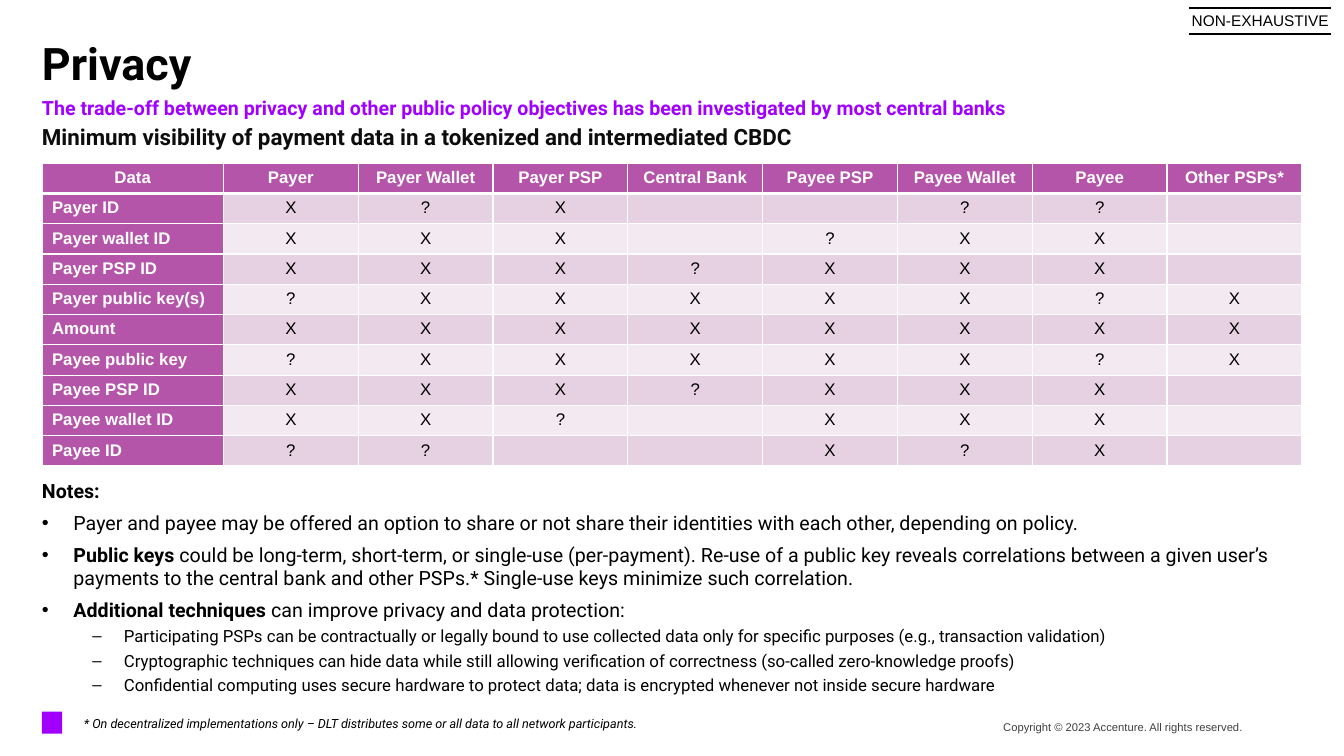
from dataclasses import dataclass

from lxml.etree import SubElement
from pptx import Presentation
from pptx.dml.color import RGBColor
from pptx.enum.shapes import MSO_CONNECTOR, MSO_SHAPE
from pptx.enum.text import MSO_ANCHOR, PP_ALIGN
from pptx.oxml.ns import qn
from pptx.slide import Slide
from pptx.table import _Cell
from pptx.text.text import TextFrame, _Paragraph
from pptx.util import Pt


@dataclass(frozen=True)
class Theme:
    heading_font: str = "Roboto"
    table_font: str = "Arial"
    black: str = "000000"
    soft_black: str = "0D0D0D"
    grey: str = "404040"
    white: str = "FFFFFF"
    violet: str = "A100FF"
    plum: str = "B455AA"
    bands: tuple[str, str] = ("E5D1E2", "F2E9F1")
    title: float = 32
    heading: float = 16
    body: float = 14
    detail: float = 12
    tag: float = 11
    footnote: float = 9
    copyright: float = 8


THEME = Theme()


@dataclass(frozen=True)
class Style:
    size: float
    color: str = THEME.black
    font: str = THEME.heading_font
    bold: bool = False
    italic: bool = False


@dataclass(frozen=True)
class Box:
    left: float
    top: float
    width: float
    height: float


@dataclass(frozen=True)
class Note:
    text: str
    lead: str = ""
    bullet: str = "•"
    margin: float = 22.5
    size: float = THEME.body
    after: float = 6


def detail(text: str) -> Note:
    return Note(text, bullet="–", margin=58.5, size=THEME.detail, after=3)


MARGIN, CONTENT_WIDTH = 30, 900
HANGING = 22.5
ROW_HEIGHT, DATA_WIDTH = 21.6, 129.6

PARTIES = ["Payer", "Payer Wallet", "Payer PSP", "Central Bank", "Payee PSP",
           "Payee Wallet", "Payee", "Other PSPs*"]
# One mark per party; a dot stands for an empty cell
VISIBILITY = {
    "Payer ID": "X?X..??.",
    "Payer wallet ID": "XXX.?XX.",
    "Payer PSP ID": "XXX?XXX.",
    "Payer public key(s)": "?XXXXX?X",
    "Amount": "XXXXXXXX",
    "Payee public key": "?XXXXX?X",
    "Payee PSP ID": "XXX?XXX.",
    "Payee wallet ID": "XX?.XXX.",
    "Payee ID": "??..X?X.",
}
NOTES = [
    Note("Payer and payee may be offered an option to share or not share their "
         "identities with each other, depending on policy."),
    Note("could be long-term, short-term, or single-use (per-payment). Re-use of a "
         "public key reveals correlations between a given user’s payments to the "
         "central bank and other PSPs.* Single-use keys minimize such correlation.",
         lead="Public keys "),
    Note("can improve privacy and data protection:", lead="Additional techniques ", after=3),
    detail("Participating PSPs can be contractually or legally bound to use collected "
           "data only for specific purposes (e.g., transaction validation)"),
    detail("Cryptographic techniques can hide data while still allowing verification "
           "of correctness (so-called zero-knowledge proofs)"),
    detail("Confidential computing uses secure hardware to protect data; data is "
           "encrypted whenever not inside secure hardware"),
]


def add_run(paragraph: _Paragraph, text: str, style: Style) -> None:
    run = paragraph.add_run()
    run.text = text
    run.font.name, run.font.size = style.font, Pt(style.size)
    run.font.bold, run.font.italic = style.bold, style.italic
    run.font.color.rgb = RGBColor.from_string(style.color)


def add_frame(slide: Slide, box: Box, anchor: MSO_ANCHOR = MSO_ANCHOR.TOP,
              wrap: bool = True) -> TextFrame:
    frame = slide.shapes.add_textbox(
        Pt(box.left), Pt(box.top), Pt(box.width), Pt(box.height)).text_frame
    frame.margin_left = frame.margin_right = frame.margin_top = frame.margin_bottom = 0
    frame.word_wrap, frame.vertical_anchor = wrap, anchor
    return frame


def add_label(slide: Slide, box: Box, text: str, style: Style,
              align: PP_ALIGN = PP_ALIGN.LEFT, anchor: MSO_ANCHOR = MSO_ANCHOR.TOP,
              wrap: bool = True) -> None:
    paragraph = add_frame(slide, box, anchor, wrap).paragraphs[0]
    paragraph.alignment = align
    add_run(paragraph, text, style)


def add_rule(slide: Slide, left: float, right: float, y: float) -> None:
    rule = slide.shapes.add_connector(
        MSO_CONNECTOR.STRAIGHT, Pt(left), Pt(y), Pt(right), Pt(y))
    rule.line.color.rgb = RGBColor.from_string(THEME.black)
    rule.line.width = Pt(1)
    SubElement(rule._element.spPr, qn("a:effectLst"))


def fill_cell(cell: _Cell, text: str, fill: str, style: Style,
              align: PP_ALIGN, bottom: float = 1) -> None:
    borders = cell._tc.get_or_add_tcPr()
    for side, width in (("L", 1), ("R", 1), ("T", 1), ("B", bottom)):
        line = SubElement(borders, qn(f"a:ln{side}"), w=str(Pt(width)))
        SubElement(SubElement(line, qn("a:solidFill")), qn("a:srgbClr"), val=THEME.white)
    cell.fill.solid()
    cell.fill.fore_color.rgb = RGBColor.from_string(fill)
    paragraph = cell.text_frame.paragraphs[0]
    paragraph.alignment = align
    if text:
        add_run(paragraph, text, style)
    else:  # keeps an empty cell from stretching its row
        SubElement(paragraph._p, qn("a:endParaRPr"), sz=str(int(style.size * 100)))


def add_visibility_table(slide: Slide) -> None:
    table = slide.shapes.add_table(
        len(VISIBILITY) + 1, len(PARTIES) + 1, Pt(MARGIN), Pt(116.6),
        Pt(CONTENT_WIDTH), Pt(ROW_HEIGHT * (len(VISIBILITY) + 1))).table
    for row in table.rows:
        row.height = Pt(ROW_HEIGHT)
    for index, column in enumerate(table.columns):
        column.width = Pt((CONTENT_WIDTH - DATA_WIDTH) / len(PARTIES) if index else DATA_WIDTH)
    header = Style(THEME.detail, THEME.white, THEME.table_font, bold=True)
    mark_style = Style(THEME.detail, font=THEME.table_font)
    for column, name in enumerate(["Data", *PARTIES]):
        fill_cell(table.cell(0, column), name, THEME.plum, header, PP_ALIGN.CENTER, bottom=3)
    for row, (item, marks) in enumerate(VISIBILITY.items(), start=1):
        fill_cell(table.cell(row, 0), item, THEME.plum, header, PP_ALIGN.LEFT)
        for column, mark in enumerate(marks, start=1):
            fill_cell(table.cell(row, column), mark.strip("."), THEME.bands[(row - 1) % 2],
                      mark_style, PP_ALIGN.CENTER)


def add_notes(slide: Slide) -> None:
    frame = add_frame(slide, Box(MARGIN, 342, CONTENT_WIDTH, 155.5))
    frame.paragraphs[0].space_after = Pt(6)
    add_run(frame.paragraphs[0], "Notes:", Style(THEME.body, bold=True))
    for note in NOTES:
        paragraph = frame.add_paragraph()
        properties = paragraph._p.get_or_add_pPr()
        properties.set("marL", str(Pt(note.margin)))
        properties.set("indent", str(-Pt(HANGING)))
        SubElement(properties, qn("a:buFont"), typeface="Arial")
        SubElement(properties, qn("a:buChar"), char=note.bullet)
        paragraph.space_after = Pt(note.after)
        if note.lead:
            add_run(paragraph, note.lead, Style(note.size, bold=True))
        add_run(paragraph, note.text, Style(note.size))


def main() -> None:
    deck = Presentation()
    deck.slide_width, deck.slide_height = Pt(960), Pt(540)
    slide = deck.slides.add_slide(deck.slide_layouts[6])

    # Title and subtitle
    heading = add_frame(slide, Box(MARGIN, 33, CONTENT_WIDTH, 49))
    title, subtitle = heading.paragraphs[0], heading.add_paragraph()
    title.line_spacing = subtitle.line_spacing = 0.8
    title.space_after = Pt(8)
    add_run(title, "Privacy", Style(THEME.title, bold=True))
    add_run(subtitle, "The trade-off between privacy and other public policy objectives "
            "has been investigated by most central banks",
            Style(THEME.body, THEME.violet, bold=True))

    # Tag in the top corner
    add_label(slide, Box(849.5, 7.9, 101.5, 13.7), "NON-EXHAUSTIVE",
              Style(THEME.tag, font=THEME.table_font), PP_ALIGN.CENTER, MSO_ANCHOR.MIDDLE)
    for y in (5.8, 24.3):
        add_rule(slide, 849.6, 950.4, y)

    # Table with its heading
    add_label(slide, Box(MARGIN, 88, 595, 19.5),
              "Minimum visibility of payment data in a tokenized and intermediated CBDC",
              Style(THEME.heading, THEME.soft_black, bold=True), wrap=False)
    add_visibility_table(slide)

    add_notes(slide)

    # Footer
    marker = slide.shapes.add_shape(MSO_SHAPE.RECTANGLE, Pt(MARGIN), Pt(508.3), Pt(14.5), Pt(15.8))
    marker.shadow.inherit = False
    marker.fill.solid()
    marker.fill.fore_color.rgb = RGBColor.from_string(THEME.violet)
    marker.line.fill.background()
    add_label(slide, Box(60, 504.7, 449, 23.8), "* On decentralized implementations only – "
              "DLT distributes some or all data to all network participants.",
              Style(THEME.footnote, italic=True), anchor=MSO_ANCHOR.MIDDLE)
    add_label(slide, Box(702, 514.8, 185.8, 10), "Copyright © 2023 Accenture. All rights reserved.",
              Style(THEME.copyright, THEME.grey, THEME.table_font), PP_ALIGN.RIGHT)

    deck.save("out.pptx")


if __name__ == "__main__":
    main()
